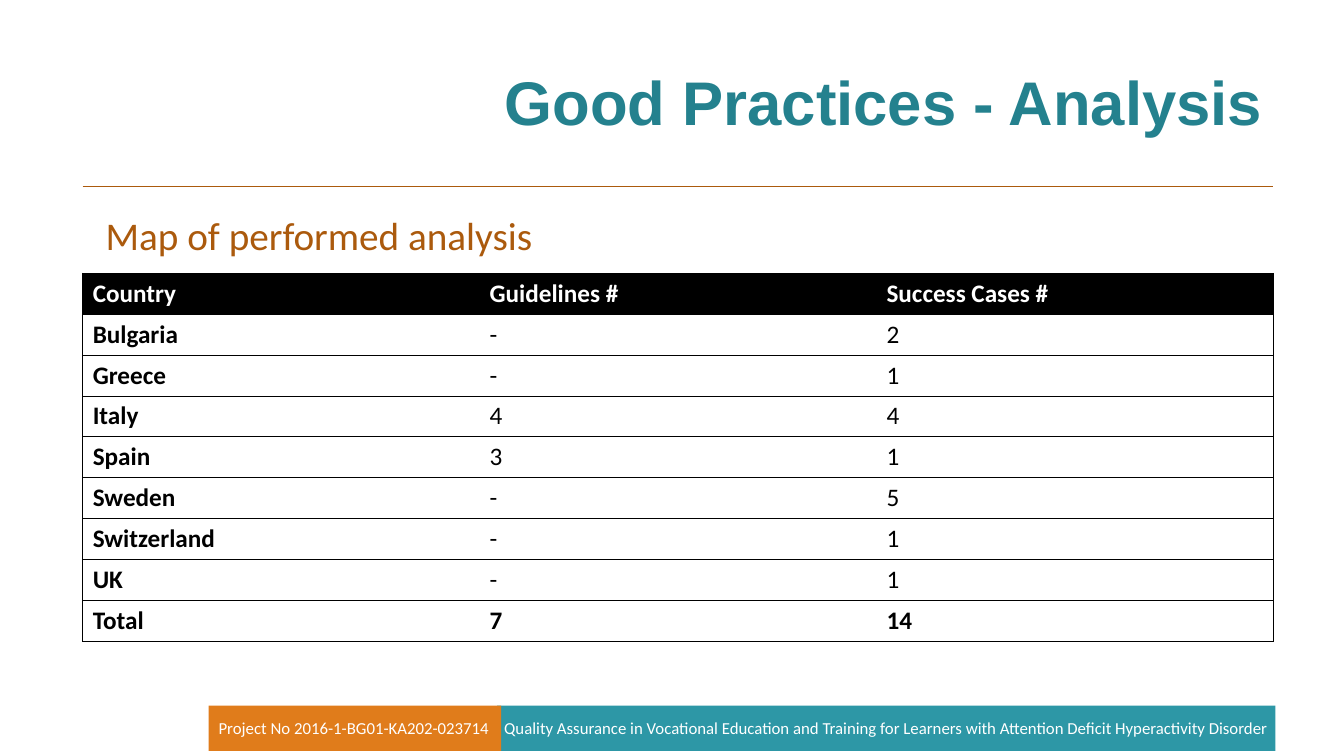
from dataclasses import dataclass

from lxml import etree
from pptx import Presentation
from pptx.dml.color import RGBColor
from pptx.enum.shapes import MSO_CONNECTOR, MSO_SHAPE
from pptx.enum.text import MSO_ANCHOR, PP_ALIGN
from pptx.oxml.ns import qn
from pptx.util import Inches, Pt

LEFT, CENTER, RIGHT = PP_ALIGN.LEFT, PP_ALIGN.CENTER, PP_ALIGN.RIGHT
TOP, MIDDLE = MSO_ANCHOR.TOP, MSO_ANCHOR.MIDDLE
RECT, STRAIGHT = MSO_SHAPE.RECTANGLE, MSO_CONNECTOR.STRAIGHT

BLACK, WHITE, BROWN = "000000", "FFFFFF", "AB5A0D"
TEAL, DARK_TEAL, ORANGE = "2D97A6", "24818E", "E07C1B"
MARGIN, CONTENT_W = 0.82, 11.81
ROW_H = 0.406

ROWS = [
    ("Country", "Guidelines #", "Success Cases #"),
    ("Bulgaria", "-", "2"),
    ("Greece", "-", "1"),
    ("Italy", "4", "4"),
    ("Spain", "3", "1"),
    ("Sweden", "-", "5"),
    ("Switzerland", "-", "1"),
    ("UK", "-", "1"),
    ("Total", "7", "14"),
]


@dataclass
class Bar:
    left: float
    width: float
    color: str


@dataclass
class Label:
    text: str
    box: tuple[float, float, float, float]
    size: int
    color: str
    font: str = "Calibri"
    bold: bool = False
    align: PP_ALIGN = LEFT
    anchor: MSO_ANCHOR = TOP
    spacing: float = 1.0


BARS = [Bar(4.93, 7.72, TEAL), Bar(2.07, 2.9, ORANGE)]

LABELS = [
    Label("Quality Assurance in Vocational Education and Training for Learners "
          "with Attention Deficit Hyperactivity Disorder",
          (4.89, 7.07, 7.8, 0.3), 12, WHITE, align=CENTER),
    Label("Project No 2016-1-BG01-KA202-023714", (2.07, 7.07, 2.9, 0.3), 12, WHITE),
    Label("Good Practices - Analysis", (MARGIN, 0.32, CONTENT_W, 1.45), 44, DARK_TEAL,
          "Arial", True, RIGHT, MIDDLE, 0.9),
    Label("Map of performed analysis", (0.95, 2.05, 11.49, 0.57), 28, BROWN),
]


def rgb(color: str) -> RGBColor:
    return RGBColor.from_string(color)


def set_font(font, color: str, **formats) -> None:
    for name, value in formats.items():
        setattr(font, name, value)
    font.color.rgb = rgb(color)


def add_rule(slide) -> None:
    line = slide.shapes.add_connector(STRAIGHT, Inches(MARGIN), Inches(1.85),
                                      Inches(MARGIN + CONTENT_W), Inches(1.85))
    line.line.color.rgb = rgb(BROWN)
    line.line.width = Pt(0.5)
    etree.SubElement(line._element.spPr, qn("a:effectLst"))


def add_bar(slide, bar: Bar) -> None:
    sp = slide.shapes.add_shape(RECT, Inches(bar.left), Inches(7),
                                Inches(bar.width), Inches(0.45))
    sp.shadow.inherit = False
    sp.fill.solid()
    sp.fill.fore_color.rgb = rgb(bar.color)
    sp.line.fill.background()


def add_label(slide, label: Label) -> None:
    tf = slide.shapes.add_textbox(*map(Inches, label.box)).text_frame
    tf.word_wrap = True
    tf.vertical_anchor = label.anchor
    p = tf.paragraphs[0]
    p.alignment = label.align
    p.line_spacing = label.spacing
    r = p.add_run()
    r.text = label.text
    set_font(r.font, label.color, name=label.font, size=Pt(label.size), bold=label.bold)


def set_borders(cell, edges: dict[str, bool]) -> None:
    tcPr = cell._tc.get_or_add_tcPr()
    for i, (edge, visible) in enumerate(edges.items()):
        ln = etree.Element(qn(f"a:ln{edge}"), w=str(Pt(0.5)))
        if visible:
            fill = etree.SubElement(ln, qn("a:solidFill"))
            etree.SubElement(fill, qn("a:srgbClr"), val=BLACK)
        else:
            etree.SubElement(ln, qn("a:noFill"))
        tcPr.insert(i, ln)


def add_analysis_table(slide) -> None:
    n_rows, n_cols = len(ROWS), len(ROWS[0])
    table = slide.shapes.add_table(n_rows, n_cols, Inches(MARGIN), Inches(2.71),
                                   Inches(CONTENT_W), Inches(ROW_H * n_rows)).table
    table.horz_banding = False
    for i, row in enumerate(ROWS):
        header, total = i == 0, i == n_rows - 1
        for j, text in enumerate(row):
            cell = table.cell(i, j)
            if header:
                cell.fill.solid()
                cell.fill.fore_color.rgb = rgb(BLACK)
            else:
                cell.fill.background()
            set_borders(cell, {"L": j == 0, "R": j == n_cols - 1, "T": True, "B": True})
            r = cell.text_frame.paragraphs[0].add_run()
            r.text = text
            set_font(r.font, WHITE if header else BLACK, name="Calibri", size=Pt(18),
                     bold=header or total or j == 0)


def main() -> None:
    prs = Presentation()
    prs.slide_width, prs.slide_height = Inches(13.33), Inches(7.5)
    slide = prs.slides.add_slide(prs.slide_layouts[6])
    add_rule(slide)
    for bar in BARS:
        add_bar(slide, bar)
    for label in LABELS:
        add_label(slide, label)
    add_analysis_table(slide)
    prs.save("out.pptx")


if __name__ == "__main__":
    main()
